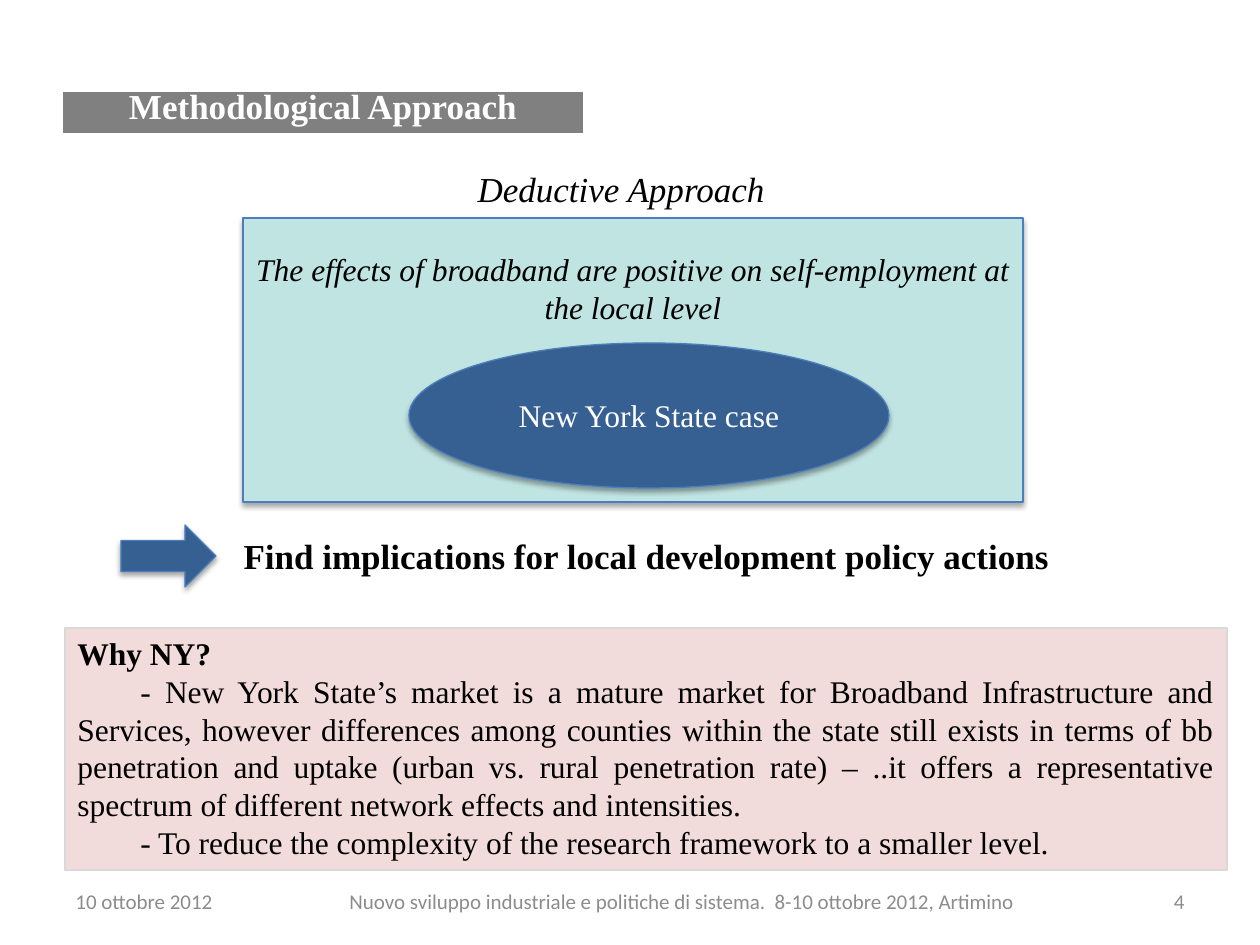
from lxml.etree import SubElement as Sub
from pptx import Presentation
from pptx.dml.color import RGBColor as RGB
from pptx.enum.shapes import MSO_SHAPE as Shape
from pptx.enum.text import MSO_ANCHOR as Anchor, PP_ALIGN as Align
from pptx.oxml.ns import qn
from pptx.util import Pt

PX = 914400 / 126
THEME = {
    "serif": "Times New Roman", "sans": "Calibri",
    "small": 12, "body": 18, "head": 20,
    "black": "000000", "white": "FFFFFF", "muted": "8C8C8C", "gray": "808080",
    "pink": "F2DCDB", "pale": "D9D9D9", "teal": "C0E4E2",
    "navy": "376092", "edge": "4B7EBC",
}


def write(shape, *lines, size="body", font="serif", color="black", bold=False,
          italic=False, align=Align.CENTER, anchor=Anchor.MIDDLE, top=6, indent=0):
    """Fill the shape with paragraphs; top and indent are in px."""
    frame = shape.text_frame
    frame.word_wrap = True
    frame.vertical_anchor = anchor
    frame.margin_top = round(top * PX)
    for i, line in enumerate(lines):
        para = frame.add_paragraph() if i or frame.text else frame.paragraphs[0]
        para.alignment = align
        if indent:
            para._p.get_or_add_pPr().set("indent", str(round(indent * PX)))
        run = para.add_run()
        run.text = line
        face = run.font
        face.name, face.size = THEME[font], Pt(THEME[size])
        face.bold, face.italic = bold, italic
        face.color.rgb = RGB.from_string(THEME[color])


def draw(kind, box, fill, line=None, shadow=False):
    shape = slide.shapes.add_shape(kind, *(round(n * PX) for n in box))
    shape.shadow.inherit = False
    shape.fill.solid()
    shape.fill.fore_color.rgb = RGB.from_string(THEME[fill])
    if line:
        shape.line.color.rgb = RGB.from_string(THEME[line])
        shape.line.width = Pt(0.75)
    else:
        shape.line.fill.background()
    if shadow:
        effects = shape._element.spPr.find(qn("a:effectLst"))
        outer = Sub(effects, qn("a:outerShdw"), blurRad=str(Pt(3.1)),
                    dist=str(Pt(1.8)), dir="5400000", rotWithShape="0")
        tint = Sub(outer, qn("a:srgbClr"), val=THEME["black"])
        Sub(tint, qn("a:alpha"), val="35000")
    return shape


deck = Presentation()
deck.slide_width, deck.slide_height = round(1260 * PX), round(945 * PX)
slide = deck.slides.add_slide(deck.slide_layouts[6])

# Footer and free text
foot = {"size": "small", "font": "sans", "color": "muted"}
event = "Nuovo sviluppo industriale e politiche di sistema.  8-10 ottobre 2012, Artimino"
texts = [
    ((63, 876, 294, 50), "10 ottobre 2012", {**foot, "align": Align.LEFT}),
    ((284, 876, 796, 50), event, foot),
    ((903, 876, 294, 50), "4", {**foot, "align": Align.RIGHT}),
    ((212, 490, 869, 131), "Find implications for local development policy actions",
     {"size": "head", "bold": True}),
    ((420, 161, 411, 55), "Deductive Approach ",
     {"size": "head", "italic": True, "anchor": Anchor.TOP}),
]
for box, text, style in texts:
    write(slide.shapes.add_textbox(*(round(n * PX) for n in box)), text, **style)

# Reasons
why = draw(Shape.RECTANGLE, (65, 628, 1162, 242), "pink", "pale")
write(why, "Why NY?", bold=True, align=Align.LEFT, anchor=Anchor.TOP)
write(why,
      "- New York State’s market is a mature market for Broadband Infrastructure and "
      "Services, however differences among counties within the state still exists in "
      "terms of bb penetration and uptake (urban vs. rural penetration rate) – ..it "
      "offers a representative spectrum of different network effects and intensities.",
      "- To reduce the complexity of the research framework to a smaller level.",
      align=Align.JUSTIFY, anchor=Anchor.TOP, indent=63)

# Title bar
title = draw(Shape.RECTANGLE, (63, 92, 520, 41), "gray")
write(title, "Methodological Approach", size="head", color="white", bold=True,
      anchor=Anchor.BOTTOM)

# Thesis, case and arrow
thesis = draw(Shape.RECTANGLE, (243, 218, 780, 284), "teal", "edge", shadow=True)
write(thesis,
      "The effects of broadband are positive on self-employment at the local level",
      italic=True, anchor=Anchor.TOP, top=32)
case = draw(Shape.OVAL, (409, 343, 480, 145), "navy", "edge", shadow=True)
write(case, "New York State case", color="white")
draw(Shape.RIGHT_ARROW, (121, 525, 95, 62), "navy", "edge", shadow=True)

deck.save("out.pptx")
